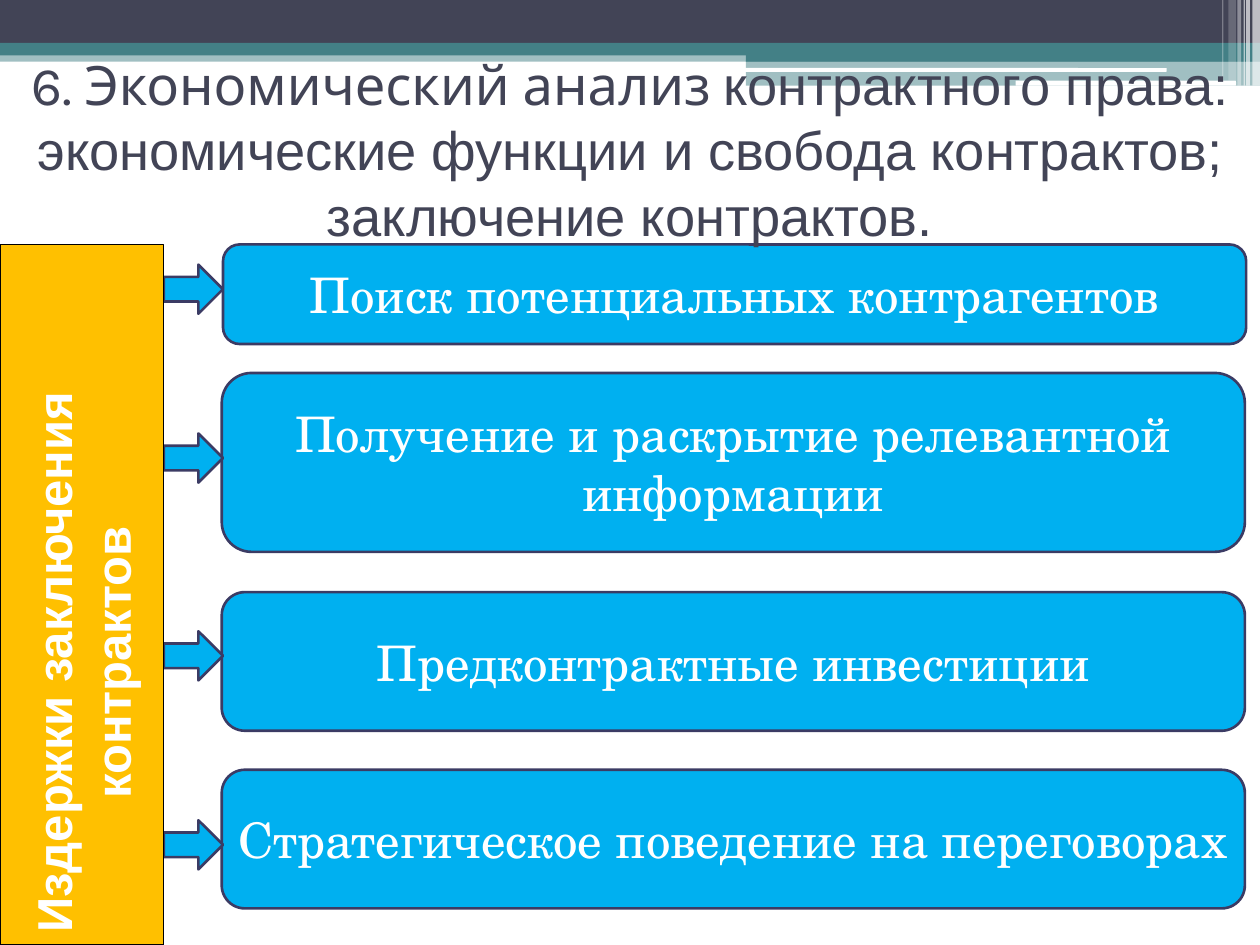
from dataclasses import dataclass
from typing import Optional

from lxml.etree import SubElement
from pptx import Presentation
from pptx.dml.color import RGBColor as Rgb
from pptx.enum.shapes import MSO_SHAPE as Kind
from pptx.enum.text import MSO_ANCHOR as Anchor, PP_ALIGN as Align
from pptx.oxml.ns import qn
from pptx.util import Inches, Pt


@dataclass(frozen=True)
class Theme:
    dark: str = "424456"
    teal: str = "438086"
    white: str = "FFFFFF"
    blue: str = "00B0F0"
    edge: str = "3B3B64"
    gold: str = "FFC000"
    black: str = "000000"
    head: str = "Karla"
    sans: str = "Arial"
    serif: str = "TeX Gyre Schola"
    title: int = 31
    body: int = 28


@dataclass(frozen=True)
class Band:
    left: float
    top: float
    width: float
    height: float
    color: str
    alpha: int = 100
    kind: Kind = Kind.RECTANGLE


@dataclass(frozen=True)
class Cost:
    text: str
    left: float
    top: float
    height: float
    arrow: float


THEME = Theme()
BANDS = [
    Band(0, 0.4, 10, 0.09, THEME.teal, 50),
    Band(0, 0, 10, 0.34, THEME.dark),
    Band(0, 0.34, 10, 0.1, THEME.teal),
    Band(5.92, 0.39, 4.08, 0.1, THEME.teal),
    Band(5.92, 0.48, 4.08, 0.2, THEME.teal, 50),
    Band(5.91, 0.54, 3.35, 0.03, THEME.white, kind=Kind.ROUNDED_RECTANGLE),
    Band(8.06, 0.64, 1.75, 0.04, THEME.white, kind=Kind.ROUNDED_RECTANGLE),
    Band(9.94, 0, 0.06, 0.68, THEME.white, 65),
    Band(9.89, 0, 0.03, 0.68, THEME.white, 65),
    Band(9.87, 0, 0.01, 0.68, THEME.white, 60),
    Band(9.82, 0, 0.03, 0.68, THEME.white, 40),
    Band(9.75, 0, 0.06, 0.64, THEME.white, 20),
    Band(9.7, 0, 0.01, 0.64, THEME.white, 30),
]
COSTS = [
    Cost("Поиск потенциальных контрагентов", 1.77, 1.94, 0.79, 2.1),
    Cost("Получение и раскрытие релевантной информации", 1.76, 2.96, 1.42, 3.44),
    Cost("Предконтрактные инвестиции", 1.76, 4.7, 1.1, 5.01),
    Cost("Стратегическое поведение на переговорах", 1.76, 6.11, 1.1, 6.51),
]
TITLE = [
    ("6. Экономический анализ ", THEME.head),
    ("контрактного права: экономические функции и свобода контрактов; "
     "заключение контрактов.", THEME.sans),
]


def add_box(slide, kind: Kind, left: float, top: float, width: float, height: float,
            fill: str, line: Optional[str] = None, weight: float = 1.5):
    box = slide.shapes.add_shape(kind, Inches(left), Inches(top), Inches(width), Inches(height))
    box.shadow.inherit = False
    box.fill.solid()
    box.fill.fore_color.rgb = Rgb.from_string(fill)
    if line:
        box.line.color.rgb = Rgb.from_string(line)
        box.line.width = Pt(weight)
    else:
        box.line.fill.background()
    return box


def style(run, face: str, size: int, color: str, bold: bool = False) -> None:
    run.font.name = face
    run.font.size = Pt(size)
    run.font.bold = bold
    run.font.color.rgb = Rgb.from_string(color)


def put_text(box, text: str, face: str, bold: bool = False) -> None:
    frame = box.text_frame
    frame.text = text
    frame.word_wrap = True
    frame.vertical_anchor = Anchor.MIDDLE
    para = frame.paragraphs[0]
    para.alignment = Align.CENTER
    style(para.runs[0], face, THEME.body, THEME.white, bold)


def draw_band(slide, band: Band) -> None:
    box = add_box(slide, band.kind, band.left, band.top, band.width, band.height, band.color)
    if band.alpha < 100:
        tint = box.fill._xPr.find(".//" + qn("a:srgbClr"))
        SubElement(tint, qn("a:alpha")).set("val", str(band.alpha * 1000))


def draw_cost(slide, cost: Cost) -> None:
    box = add_box(slide, Kind.ROUNDED_RECTANGLE, cost.left, cost.top, 8.12, cost.height,
                  THEME.blue, THEME.edge)
    put_text(box, cost.text, THEME.serif)
    box.text_frame.margin_left = box.text_frame.margin_right = Inches(0)
    add_box(slide, Kind.RIGHT_ARROW, 1.3, cost.arrow, 0.47, 0.39, THEME.blue, THEME.edge)


def draw_side(slide) -> None:
    box = add_box(slide, Kind.RECTANGLE, 0, 1.94, 1.3, 5.56, THEME.gold, THEME.black, 0.75)
    box.rotation = 180
    put_text(box, "Издержки заключения контрактов", THEME.sans, True)
    box.text_frame._txBody.bodyPr.set("vert", "eaVert")


def draw_title(slide) -> None:
    box = slide.shapes.add_textbox(Inches(0), Inches(0.36), Inches(10), Inches(1.55))
    box.text_frame.word_wrap = True
    para = box.text_frame.paragraphs[0]
    para.alignment = Align.CENTER
    for text, face in TITLE:
        run = para.add_run()
        run.text = text
        style(run, face, THEME.title, THEME.dark)


def main() -> None:
    """Build the slide on the costs of concluding contracts."""
    deck = Presentation()
    deck.slide_width, deck.slide_height = Inches(10), Inches(7.5)
    slide = deck.slides.add_slide(deck.slide_layouts[6])
    for band in BANDS:
        draw_band(slide, band)
    for cost in COSTS:
        draw_cost(slide, cost)
    draw_side(slide)
    draw_title(slide)
    deck.save("out.pptx")


if __name__ == "__main__":
    main()
